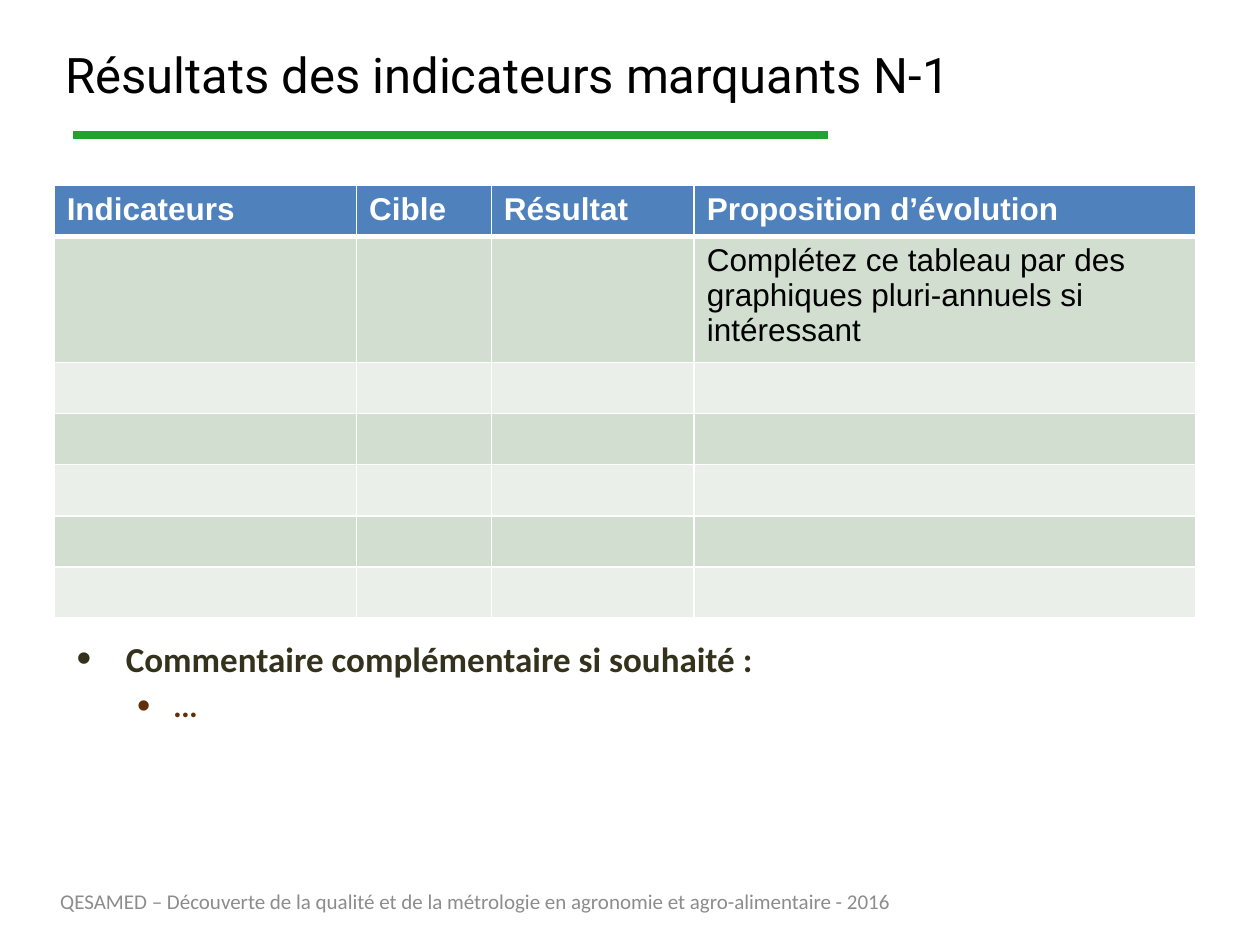
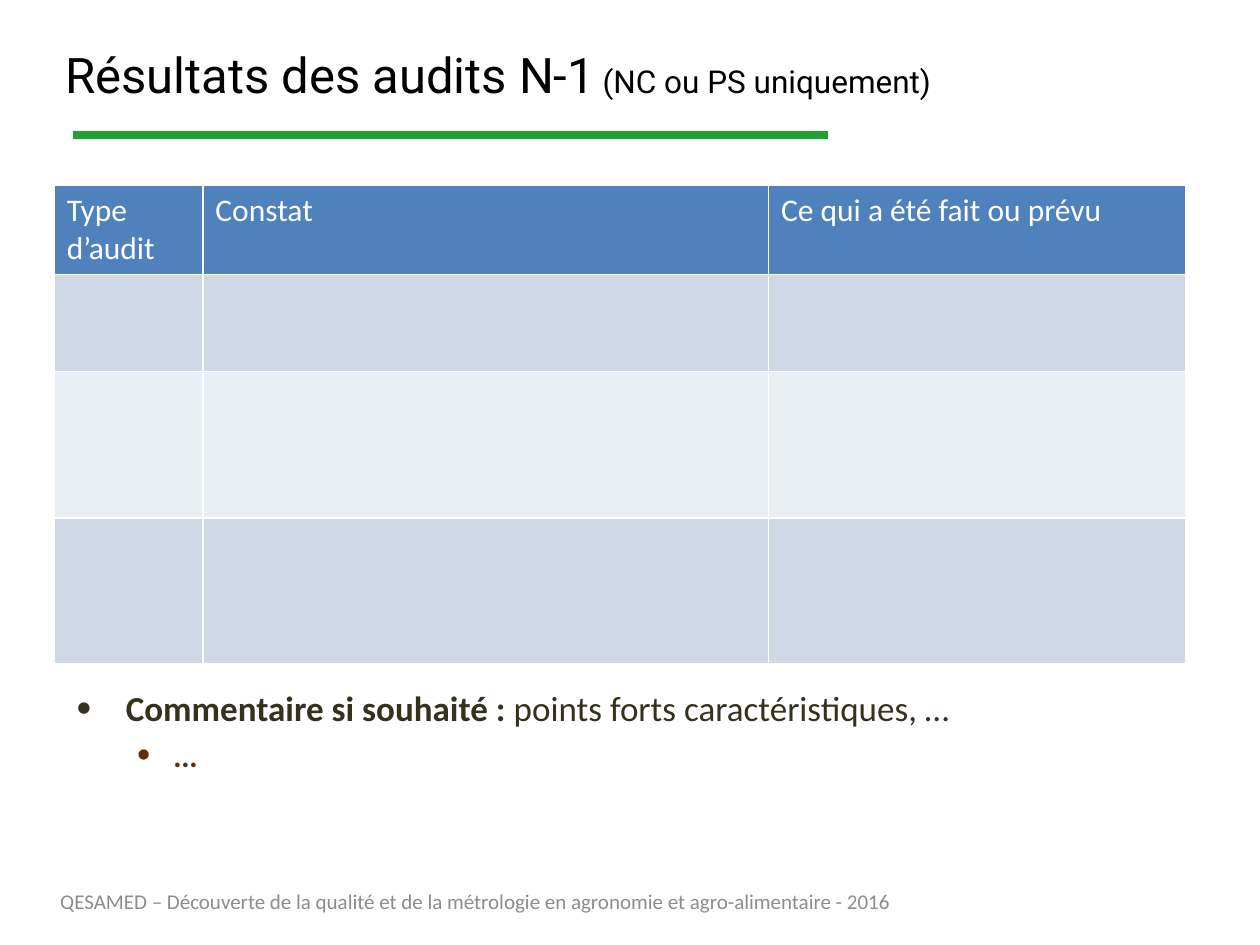
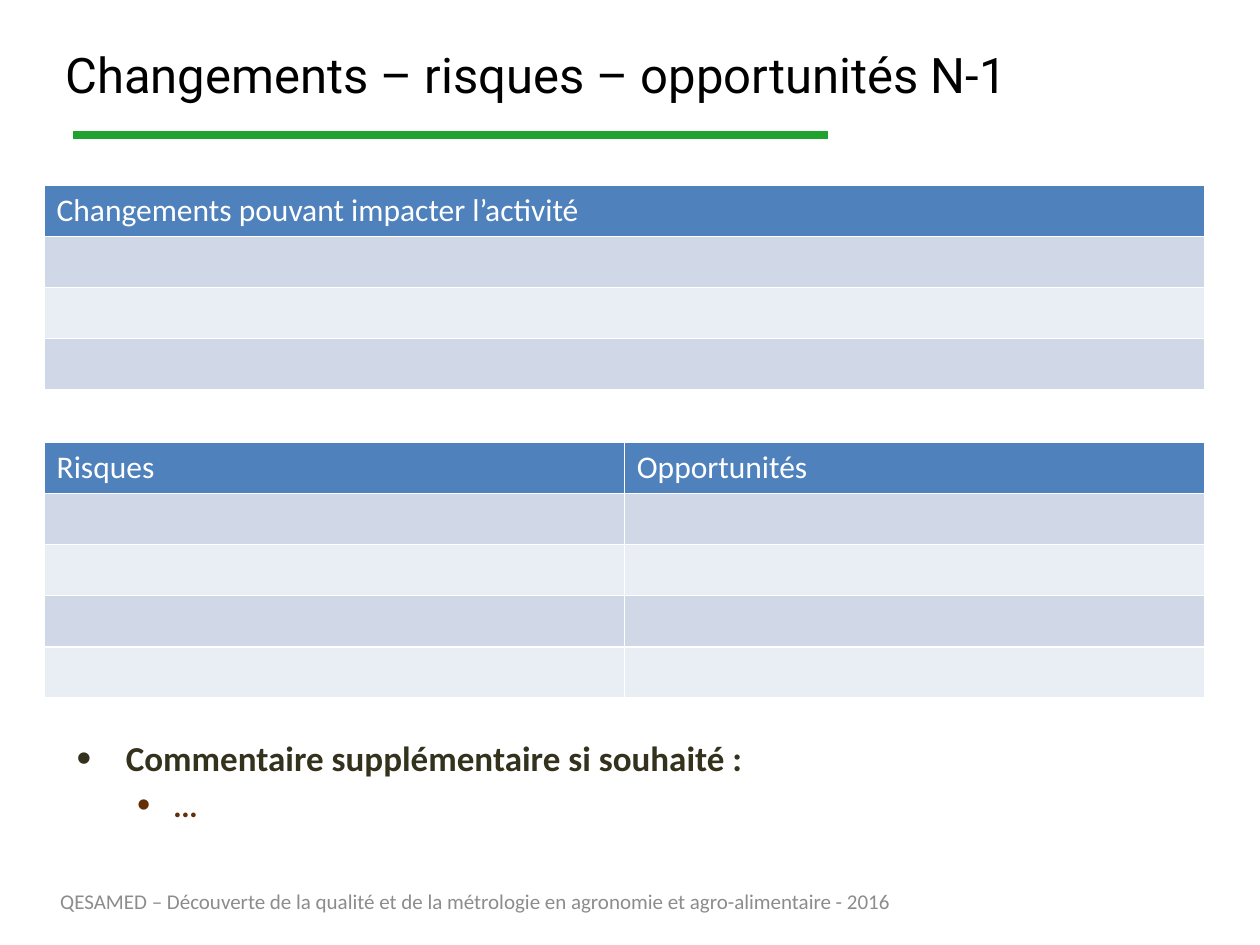
from dataclasses import dataclass

from lxml import etree
from pptx import Presentation, util as u
from pptx.dml.color import RGBColor
from pptx.enum import shapes, text
from pptx.oxml import ns


@dataclass(frozen=True)
class Theme:
    title_font: str = "Roboto"
    body_font: str = "Calibri"
    indicator_font: str = "Arial"

    title_size: int = 28
    comment_size: int = 20
    text_size: int = 18
    footer_size: int = 12

    ink: str = "000000"
    white: str = "FFFFFF"
    green: str = "1FA22E"
    grey: str = "8C8C8C"
    header: str = "4F81BD"
    comment: str = "34321D"
    detail: str = "622F06"
    green_bands: tuple = ("D1DED0", "EAEFE9")
    blue_bands: tuple = ("D0D8E8", "E9EDF4")


FOOTER = ("QESAMED – Découverte de la qualité et de la métrologie "
          "en agronomie et agro-alimentaire - 2016")
COLUMNS, ROWS = 100, 75
LINE_ROW = 4.06  # height of a one-line table row


def child(parent, tag, **attributes):
    return etree.SubElement(parent, ns.qn(tag), attributes)


def style(run, font, size, color, bold=False, italic=False):
    run.font.name = font
    run.font.size = u.Pt(size)
    run.font.color.rgb = RGBColor.from_string(color)
    run.font.bold = bold
    run.font.italic = italic


class Deck:
    """Holds the theme and the current slide; lengths are grid columns and rows."""

    def __init__(self, theme):
        self.theme = theme
        self.show = Presentation()
        self.show.slide_width, self.show.slide_height = u.Inches(10), u.Inches(7.5)
        self.slide = None

    def x(self, columns):
        return round(self.show.slide_width * columns / COLUMNS)

    def y(self, rows):
        return round(self.show.slide_height * rows / ROWS)

    def area(self, left, top, width, height):
        return self.x(left), self.y(top), self.x(width), self.y(height)

    def new_slide(self, title, note="", title_width=95.8):
        t = self.theme
        self.slide = self.show.slides.add_slide(self.show.slide_layouts[6])
        self.rule(5.8, 65.7, 10.7)
        self.line_of_text((3.8, 69.5, 82.6, 4),
                          (FOOTER, t.body_font, t.footer_size, t.grey))
        heading = [(title, t.title_font, t.title_size, t.ink)]
        if note:
            heading.append((note, t.title_font, t.text_size, t.ink))
        self.line_of_text((4.2, 2.1, title_width, 7.5), *heading)

    def rule(self, start, end, row):
        rule = self.slide.shapes.add_connector(
            shapes.MSO_CONNECTOR.STRAIGHT,
            self.x(start), self.y(row), self.x(end), self.y(row))
        rule.line.color.rgb = RGBColor.from_string(self.theme.green)
        rule.line.width = u.Pt(4.5)
        child(rule._element.spPr, "a:effectLst")

    def text_frame(self, area, anchor):
        frame = self.slide.shapes.add_textbox(*self.area(*area)).text_frame
        frame.word_wrap = True
        frame.vertical_anchor = anchor
        return frame

    def line_of_text(self, area, *parts):
        paragraph = self.text_frame(area, text.MSO_ANCHOR.MIDDLE).paragraphs[0]
        self.fill_paragraph(paragraph, parts)

    def fill_paragraph(self, paragraph, parts):
        for words, *look in parts:
            run = paragraph.add_run()
            run.text = words
            style(run, *look)

    def bullet(self, paragraph, margin, hanging, color):
        properties = paragraph._p.get_or_add_pPr()
        properties.set("marL", str(self.x(margin)))
        properties.set("indent", str(-self.x(hanging)))
        child(child(properties, "a:buClr"), "a:srgbClr", val=color)
        child(properties, "a:buSzPct", val="120000")
        child(properties, "a:buFont", typeface="Arial")
        child(properties, "a:buChar", char="•")

    def comment(self, top, height, label, hint=""):
        t = self.theme
        frame = self.text_frame((5.1, top, 89.8, height), text.MSO_ANCHOR.TOP)
        lead, detail = frame.paragraphs[0], frame.add_paragraph()
        self.bullet(lead, 3.9, 3.9, t.comment)
        parts = [(label, t.body_font, t.comment_size, t.comment, True)]
        if hint:
            parts.append((hint, t.body_font, t.comment_size, t.comment))
        self.fill_paragraph(lead, parts)
        self.bullet(detail, 7.8, 3, t.detail)
        detail.space_before = u.Pt(4)
        self.fill_paragraph(
            detail, [("…", t.body_font, t.text_size, t.detail, True, True)])

    def table(self, left, top, widths, heights, content, bands,
              font=None, bold_header=False, header_line=1):
        """Draw a banded table; content lists the leading rows, the rest stay empty."""
        t = self.theme
        frame = self.slide.shapes.add_table(
            len(heights), len(widths),
            *self.area(left, top, sum(widths), sum(heights)))
        grid = frame.table
        for column, width in zip(grid.columns, widths):
            column.width = self.x(width)
        for r, height in enumerate(heights):
            grid.rows[r].height = self.y(height)
            is_header = r == 0
            fill = t.header if is_header else bands[(r - 1) % 2]
            for c in range(len(widths)):
                cell = grid.cell(r, c)
                self.borders(cell, top=header_line if r == 1 else 1,
                             bottom=header_line if is_header else 1)
                cell.fill.solid()
                cell.fill.fore_color.rgb = RGBColor.from_string(fill)
                words = content[r][c] if r < len(content) else ""
                if words:
                    cell.text_frame.text = words
                    style(cell.text_frame.paragraphs[0].runs[0],
                          font or t.body_font, t.text_size,
                          t.white if is_header else t.ink,
                          bold_header and is_header)

    def borders(self, cell, top, bottom):
        properties = cell._tc.get_or_add_tcPr()
        for side, points in (("L", 1), ("R", 1), ("T", top), ("B", bottom)):
            edge = child(properties, f"a:ln{side}", w=str(u.Pt(points)))
            child(child(edge, "a:solidFill"), "a:srgbClr", val=self.theme.white)


def indicators(deck):
    deck.new_slide("Résultats des indicateurs marquants N-1", title_width=92.2)
    deck.table(
        4.3, 14.7, [24, 10.7, 16.1, 39.8], [LINE_ROW, 9.4] + [LINE_ROW] * 5,
        [["Indicateurs", "Cible", "Résultat", "Proposition d’évolution"],
         ["", "", "", "Complétez ce tableau par des graphiques "
                      "pluri-annuels si intéressant"]],
        deck.theme.green_bands, deck.theme.indicator_font,
        bold_header=True, header_line=3)
    deck.comment(50.1, 19.7, "Commentaire complémentaire si souhaité :")


def audits(deck):
    deck.new_slide("Résultats des audits N-1", " (NC ou PS uniquement)")
    deck.table(4.3, 14.7, [11.8, 44.9, 33.1], [7.1, 7.7, 11.6, 11.6],
               [["Type d’audit", "Constat", "Ce qui a été fait ou prévu"]],
               deck.theme.blue_bands)
    deck.comment(54, 15.7, "Commentaire si souhaité : ",
                 "points forts caractéristiques, …")


def changes(deck):
    deck.new_slide("Changements – risques – opportunités N-1")
    width = 92.1
    deck.table(3.5, 14.7, [width], [LINE_ROW] * 4,
               [["Changements pouvant impacter l’activité"]],
               deck.theme.blue_bands)
    deck.comment(58, 11, "Commentaire supplémentaire si souhaité :")
    deck.table(3.5, 35.1, [width / 2] * 2, [LINE_ROW] * 5,
               [["Risques", "Opportunités"]], deck.theme.blue_bands)


def main():
    deck = Deck(Theme())
    for build in (indicators, audits, changes):
        build(deck)
    deck.show.save("out.pptx")


if __name__ == "__main__":
    main()
